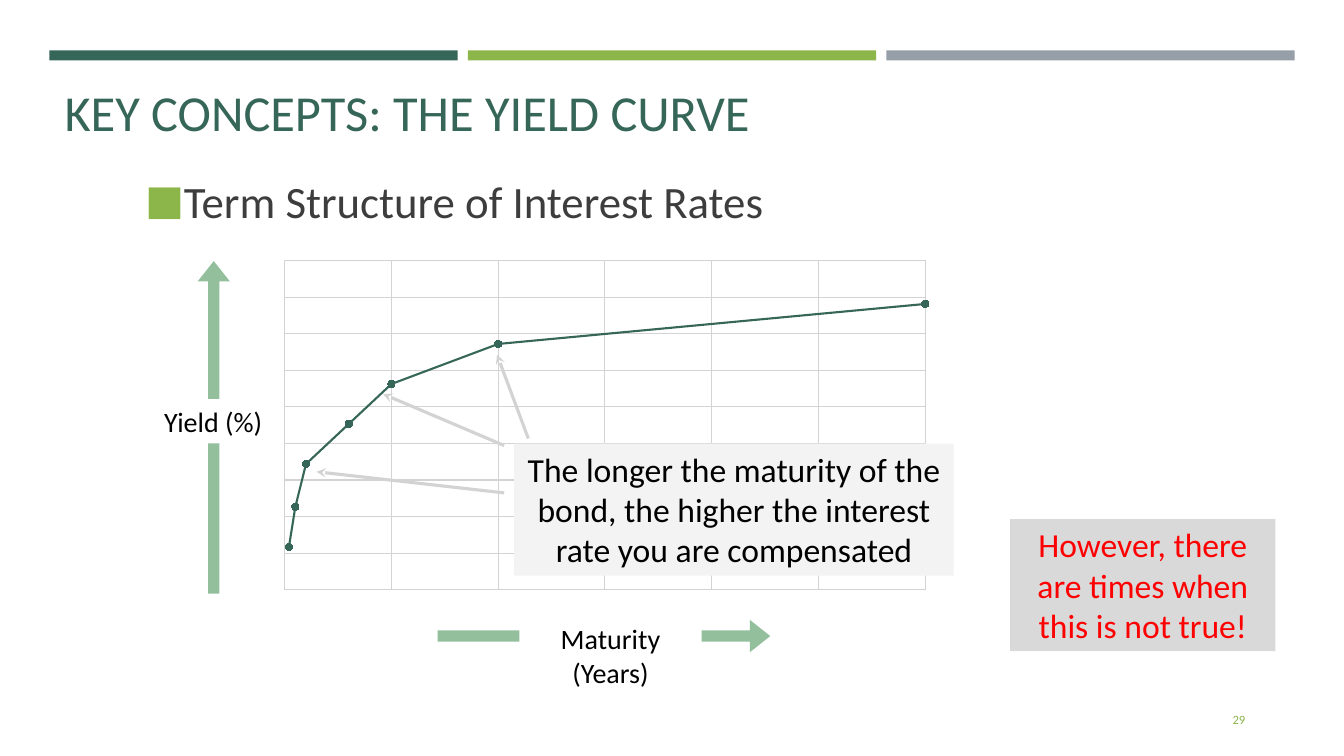
from pptx import Presentation
from pptx.chart.data import XyChartData
from pptx.dml.color import RGBColor
from pptx.enum.chart import XL_CHART_TYPE as CT, XL_MARKER_STYLE as MS
from pptx.enum.shapes import MSO_CONNECTOR as MC, MSO_SHAPE as SH
from pptx.enum.text import MSO_ANCHOR as VA, PP_ALIGN as AL
from pptx.oxml import parse_xml
from pptx.oxml.ns import nsdecls, qn
from pptx.util import Pt
from lxml.etree import SubElement

SCALE = 9144
FONT = "Calibri"
COLORS = {
    "green": "366658", "lime": "8CB64A", "slate": "969FA7", "mint": "93BF9D",
    "white": "FFFFFF", "black": "000000", "red": "FF0000", "ink": "3D3D3D",
    "panel": "F3F3F3", "gray": "D9D9D9", "grid": "D3D3D3",
}
MATURITIES = [0.2, 0.5, 1, 3, 5, 10, 30]
YIELDS = [15, 29, 44, 58, 72, 86, 100]


def px(*lengths):
    return [n * SCALE for n in lengths]


def rgb(name):
    return RGBColor.from_string(COLORS[name])


def set_font(font, size, color):
    font.name = FONT
    font.size = Pt(size)
    font.color.rgb = rgb(color)


def write(sp, text, size, color, align=AL.LEFT, anchor=VA.TOP):
    tf = sp.text_frame
    tf.word_wrap = True
    tf.vertical_anchor = anchor
    p = tf.paragraphs[0]
    p.text = text
    p.alignment = align
    set_font(p.runs[0].font, size, color)
    return tf


def add_block(s, box, fill, shape=SH.RECTANGLE):
    sp = s.shapes.add_shape(shape, *px(*box))
    sp.shadow.inherit = False
    sp.fill.solid()
    sp.fill.fore_color.rgb = rgb(fill)
    sp.line.fill.background()
    return sp


def add_label(s, box, fill, text, size, color):
    write(add_block(s, box, fill), text, size, color, AL.CENTER)


def add_axis_arrow(s, box, rotation):
    sp = add_block(s, box, "mint", SH.DOWN_ARROW)
    sp.adjustments[0] = 0.35
    sp.adjustments[1] = 0.63
    sp.rotation = rotation


def add_text(s, box, *args):
    return write(s.shapes.add_textbox(*px(*box)), *args)


def add_bullet(p):
    pPr = p._p.get_or_add_pPr()
    indent = 33 * SCALE
    pPr.set("marL", str(indent))
    pPr.set("indent", str(-indent))
    color = SubElement(pPr, qn("a:buClr"))
    SubElement(color, qn("a:srgbClr"), val=COLORS["lime"])
    SubElement(pPr, qn("a:buSzPct"), val="92000")
    SubElement(pPr, qn("a:buFont"), typeface=FONT)
    SubElement(pPr, qn("a:buChar"), char="■")


def add_pointer(s, *ends):
    c = s.shapes.add_connector(MC.STRAIGHT, *px(*ends))
    c.line.color.rgb = rgb("grid")
    c.line.width = Pt(2.25)
    SubElement(c.line._get_or_add_ln(), qn("a:tailEnd"), type="stealth")
    SubElement(c._element.spPr, qn("a:effectLst"))


def style_axis(axis, maximum, step):
    axis.minimum_scale = 0
    axis.maximum_scale = maximum
    axis.major_unit = step
    axis.has_major_gridlines = True
    line = axis.major_gridlines.format.line
    line.color.rgb = rgb("grid")
    line.width = Pt(0.75)
    axis.visible = False


def set_plot_area(chart, x, y, w, h):
    area = chart._chartSpace.chart.plotArea
    for old in area.findall(qn("c:layout")):
        area.remove(old)
    layout = parse_xml(
        f'<c:layout {nsdecls("c")}><c:manualLayout>'
        '<c:layoutTarget val="inner"/><c:xMode val="edge"/><c:yMode val="edge"/>'
        f'<c:x val="{x}"/><c:y val="{y}"/><c:w val="{w}"/><c:h val="{h}"/>'
        '</c:manualLayout></c:layout>')
    area.insert(0, layout)


def add_yield_chart(s, box):
    data = XyChartData()
    series = data.add_series("Series 1")
    for x, y in zip(MATURITIES, YIELDS):
        series.add_data_point(x, y)
    chart = s.shapes.add_chart(CT.XY_SCATTER_LINES, *px(*box), data).chart
    chart.has_title = False
    chart.has_legend = False
    set_font(chart.font, 10, "black")
    chart.plots[0].vary_by_categories = False
    style_axis(chart.category_axis, 30, 5)
    style_axis(chart.value_axis, 115.2, 12.8)
    curve = chart.plots[0].series[0]
    curve.smooth = False
    curve.format.line.color.rgb = rgb("green")
    curve.format.line.width = Pt(1.5)
    marker = curve.marker
    marker.style = MS.CIRCLE
    marker.size = 5
    marker.format.fill.solid()
    marker.format.fill.fore_color.rgb = rgb("green")
    marker.format.line.color.rgb = rgb("green")
    set_plot_area(chart, 0.06, 0.05, 0.9, 0.84)
    chart._chartSpace.chart.addnext(parse_xml(
        f'<c:spPr {nsdecls("c", "a")}><a:noFill/><a:ln><a:noFill/></a:ln></c:spPr>'))


def add_title(s, box, text):
    tf = add_text(s, box, text, 36, "green", AL.LEFT, VA.BOTTOM)
    tf.margin_left = tf.margin_right = tf.margin_top = tf.margin_bottom = 0


def main():
    prs = Presentation()
    prs.slide_width, prs.slide_height = px(1333, 750)
    s = prs.slides.add_slide(prs.slide_layouts[6])

    for i, color in enumerate(["green", "lime", "slate"]):
        add_block(s, (49 + 415 * i, 50, 405, 10), color)
    add_text(s, (1134, 694, 111, 40), "29", 9, "lime", AL.RIGHT, VA.MIDDLE)
    add_title(s, (64, 11, 1277, 130), "KEY CONCEPTS: THE YIELD CURVE")
    tf = add_text(s, (134, 167, 869, 37), "Term Structure of Interest Rates", 32, "ink")
    add_bullet(tf.paragraphs[0])

    add_axis_arrow(s, (196, 259, 32, 330), 180)
    add_label(s, (148, 396, 127, 44), "white", "Yield (%)", 20, "black")
    add_axis_arrow(s, (583, 466, 32, 330), 270)
    add_label(s, (515, 612, 181, 77), "white", "Maturity (Years)", 20, "black")
    add_label(s, (1002, 515, 263, 131), "gray",
              "However, there are times when this is not true!", 24, "red")

    add_yield_chart(s, (240, 239, 706, 389))
    add_label(s, (510, 440, 436, 131), "panel",
              "The longer the maturity of the bond, the higher the interest "
              "rate you are compensated", 24, "black")
    for ends in [(500, 489, 314, 468), (500, 442, 380, 391), (524, 435, 493, 352)]:
        add_pointer(s, *ends)

    prs.save("out.pptx")


if __name__ == "__main__":
    main()
